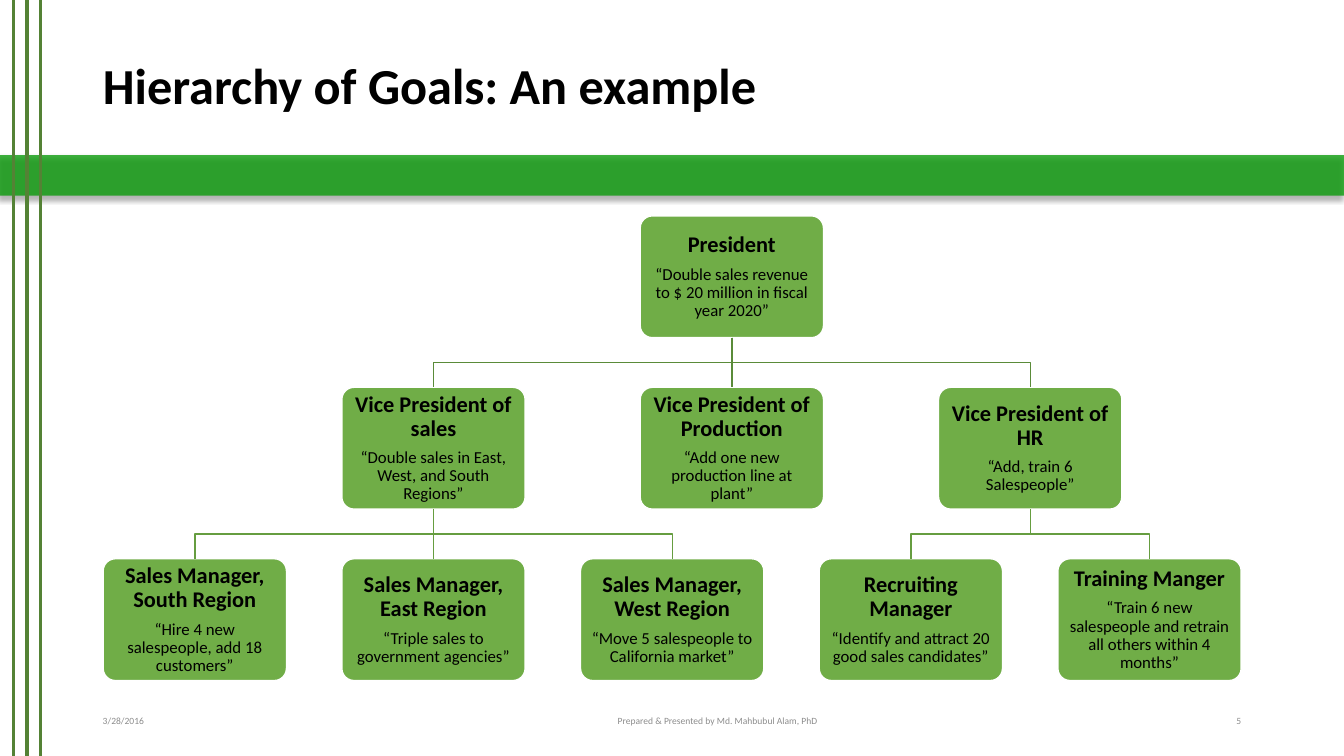
import pptx
import pptx.dml.color
import pptx.enum.shapes
import pptx.enum.text
import pptx.oxml
import pptx.oxml.ns
import pptx.util
from pptx.util import Cm

COLORS = {
    "band": "009900", "rail": "548235", "box": "70AD47", "border": "FFFFFF",
    "upper_link": "5A8B39", "lower_link": "669D40",
    "text": "000000", "footer": "8C8C8C",
}
FONT = "Calibri"
ALIGN = pptx.enum.text.PP_ALIGN
MIDDLE = pptx.enum.text.MSO_ANCHOR.MIDDLE
SHAPES = pptx.enum.shapes.MSO_SHAPE
STRAIGHT = pptx.enum.shapes.MSO_CONNECTOR.STRAIGHT

# Chart grid, in centimetres
BOX_WIDTH, BOX_HEIGHT = 4.62, 3.07
FIRST_CENTER, COLUMN_STEP = 4.91, 6.015
TOP, LEVEL_STEP = 5.44, 4.32

# Each post: title, goal, column (counted in lower-level columns), reports
SALES = ("Vice President of sales",
         "“Double sales in East, West, and South Regions”", 1, [
             ("Sales Manager, South Region",
              "“Hire 4 new salespeople, add 18 customers”", 0, []),
             ("Sales Manager, East Region",
              "“Triple sales to government agencies”", 1, []),
             ("Sales Manager, West Region",
              "“Move 5 salespeople to California market”", 2, []),
         ])
PRODUCTION = ("Vice President of Production",
              "“Add one new production line at plant”", 2.25, [])
PERSONNEL = ("Vice President of HR", "“Add, train 6 Salespeople”", 3.5, [
    ("Recruiting Manager",
     "“Identify and attract 20 good sales candidates”", 3, []),
    ("Training Manger",
     "“Train 6 new salespeople and retrain all others within 4 months”", 4, []),
])
PRESIDENT = ("President",
             "“Double sales revenue to $ 20 million in fiscal year 2020”",
             2.25, [SALES, PRODUCTION, PERSONNEL])


def color(name):
    return pptx.dml.color.RGBColor.from_string(COLORS[name])


def add_span(para, text, size, color_name, bold=False):
    span = para.add_run()
    span.text = text
    span.font.name = FONT
    span.font.size = pptx.util.Pt(size)
    span.font.bold = bold
    span.font.color.rgb = color(color_name)


def add_link_style(shape, color_name, width):
    shape.line.color.rgb = color(color_name)
    shape.line.width = pptx.util.Pt(width)


def add_line(page, start, end, color_name, width):
    line = page.shapes.add_connector(
        STRAIGHT, Cm(start[0]), Cm(start[1]), Cm(end[0]), Cm(end[1]))
    add_link_style(line, color_name, width)
    pptx.oxml.ns.qn("a:effectLst")
    line._element.spPr.append(pptx.oxml.parse_xml(
        "<a:effectLst %s/>" % pptx.oxml.ns.nsdecls("a")))
    return line


def add_band(page):
    band = page.shapes.add_shape(
        SHAPES.RECTANGLE, 0, Cm(3.91), Cm(33.87), Cm(1.02))
    band.fill.solid()
    band.fill.fore_color.rgb = color("band")
    band.line.fill.background()
    band.shadow.inherit = False
    properties = band._element.spPr
    # Transparency and soft shadow
    fill_color = properties.find(".//" + pptx.oxml.ns.qn("a:srgbClr"))
    names = pptx.oxml.ns.nsdecls("a")
    fill_color.append(pptx.oxml.parse_xml('<a:alpha %s val="75000"/>' % names))
    properties.find(pptx.oxml.ns.qn("a:effectLst")).append(pptx.oxml.parse_xml(
        '<a:outerShdw %s blurRad="50800" dist="38100" dir="8100000">'
        '<a:srgbClr val="000000"><a:alpha val="40000"/></a:srgbClr>'
        '</a:outerShdw>' % names))


def set_title(page, text):
    title = page.shapes.title
    title.left, title.top = Cm(2.34), Cm(1.02)
    title.width, title.height = Cm(28.85), Cm(2.41)
    title.text_frame.vertical_anchor = MIDDLE
    para = title.text_frame.paragraphs[0]
    para.alignment = ALIGN.LEFT
    para.line_spacing = 0.9
    add_span(para, text, 36, "text", bold=True)


def add_post_box(page, title, goal, center, top):
    box = page.shapes.add_shape(
        SHAPES.ROUNDED_RECTANGLE, Cm(center - BOX_WIDTH / 2), Cm(top),
        Cm(BOX_WIDTH), Cm(BOX_HEIGHT))
    box.adjustments[0] = 0.1
    box.shadow.inherit = False
    box.fill.solid()
    box.fill.fore_color.rgb = color("box")
    add_link_style(box, "border", 1)
    frame = box.text_frame
    frame.word_wrap = True
    frame.vertical_anchor = MIDDLE
    frame.margin_left = frame.margin_right = Cm(0.18)
    frame.margin_top = frame.margin_bottom = Cm(0.18)
    paras = (frame.paragraphs[0], frame.add_paragraph())
    for para, text, size, bold in zip(paras, (title, goal), (16, 12), (True, False)):
        para.alignment = ALIGN.CENTER
        para.line_spacing = 0.9
        para.space_after = pptx.util.Pt(size * 0.35)
        add_span(para, text, size, "text", bold)
    return box


def add_elbow(page, start, end, color_name):
    bend = (start[1] + end[1]) / 2
    points = [start, (start[0], bend), (end[0], bend), end]
    corners = [(Cm(x), Cm(y)) for x, y in points]
    builder = page.shapes.build_freeform(*corners[0])
    builder.add_line_segments(corners[1:], close=False)
    elbow = builder.convert_to_shape()
    elbow.fill.background()
    elbow.shadow.inherit = False
    add_link_style(elbow, color_name, 1)


def add_post(page, post, level=0):
    """Draw a post, everyone below it, and the links between them."""
    title, goal, column, reports = post
    center = FIRST_CENTER + column * COLUMN_STEP
    top = TOP + level * LEVEL_STEP
    box = add_post_box(page, title, goal, center, top)
    link_color = "lower_link" if level else "upper_link"
    for report in reports:
        report_box = add_post(page, report, level + 1)
        start = (center, top + BOX_HEIGHT)
        end = (FIRST_CENTER + report[2] * COLUMN_STEP, top + LEVEL_STEP)
        if report[2] == column:
            line = add_line(page, start, end, link_color, 1)
            line.begin_connect(box, 2)
            line.end_connect(report_box, 0)
        else:
            add_elbow(page, start, end, link_color)
    return box


def add_footer(page, text, left, width, alignment):
    box = page.shapes.add_textbox(Cm(left), Cm(17.65), Cm(width), Cm(1.02))
    box.text_frame.word_wrap = True
    box.text_frame.vertical_anchor = MIDDLE
    para = box.text_frame.paragraphs[0]
    para.alignment = alignment
    add_span(para, text, 6.8, "footer")


def main():
    deck = pptx.Presentation()
    deck.slide_width, deck.slide_height = Cm(33.87), Cm(19.05)
    page = deck.slides.add_slide(deck.slide_layouts[5])

    # Background band and rails
    add_band(page)
    for x in (0.33, 0.68, 1.02):
        add_line(page, (x, 0), (x, 19.05), "rail", 2.25)

    # Title and organisation chart
    set_title(page, "Hierarchy of Goals: An example")
    add_post(page, PRESIDENT)

    # Footer
    add_footer(page, "3/28/2016", 2.34, 7.62, ALIGN.LEFT)
    add_footer(page, "Prepared & Presented by Md. Mahbubul Alam, PhD",
               12.37, 11.43, ALIGN.CENTER)
    add_footer(page, "5", 29.03, 2.5, ALIGN.RIGHT)

    deck.save("out.pptx")


if __name__ == "__main__":
    main()
